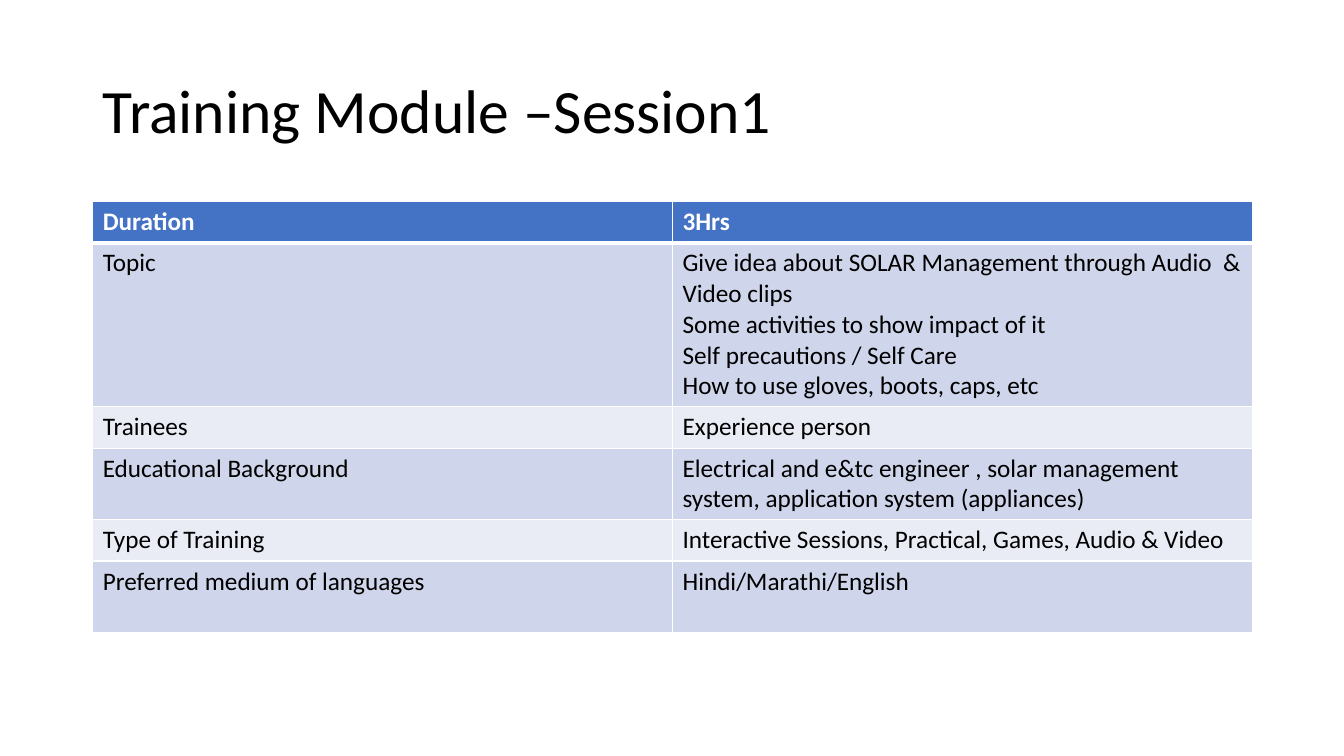
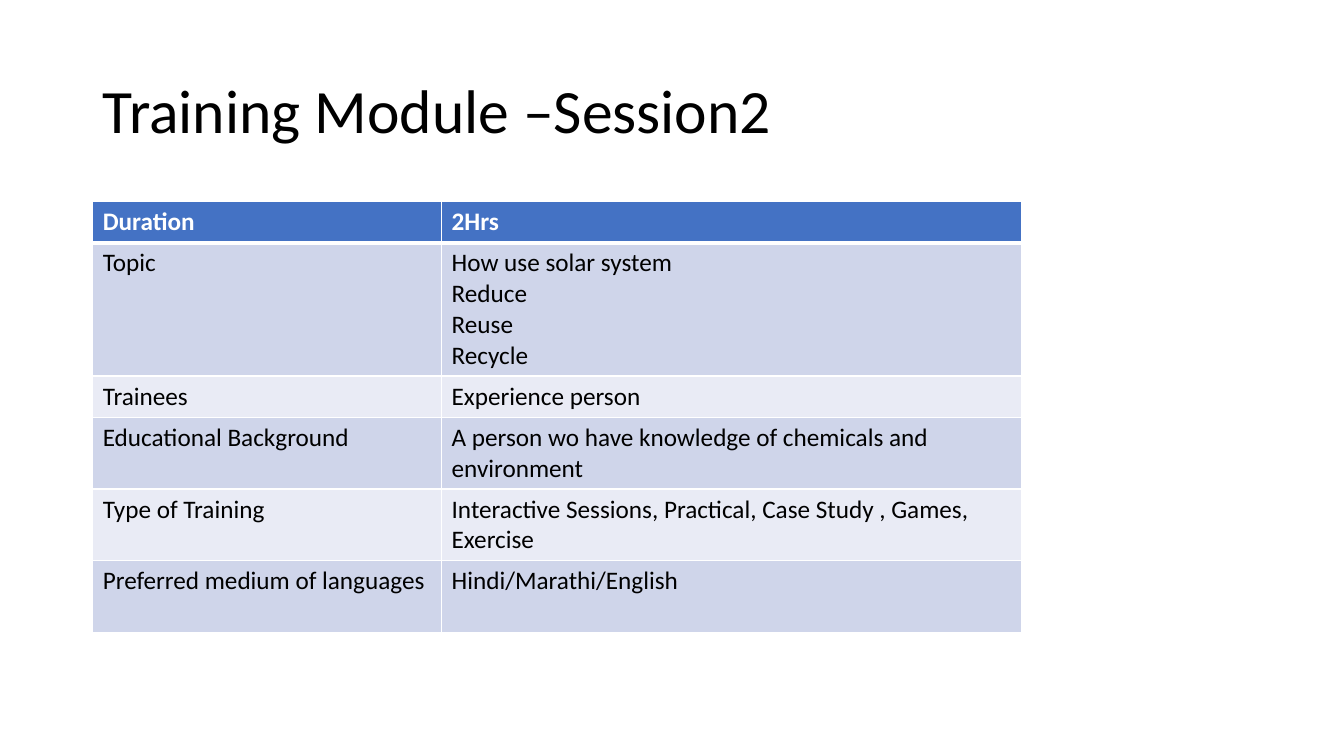
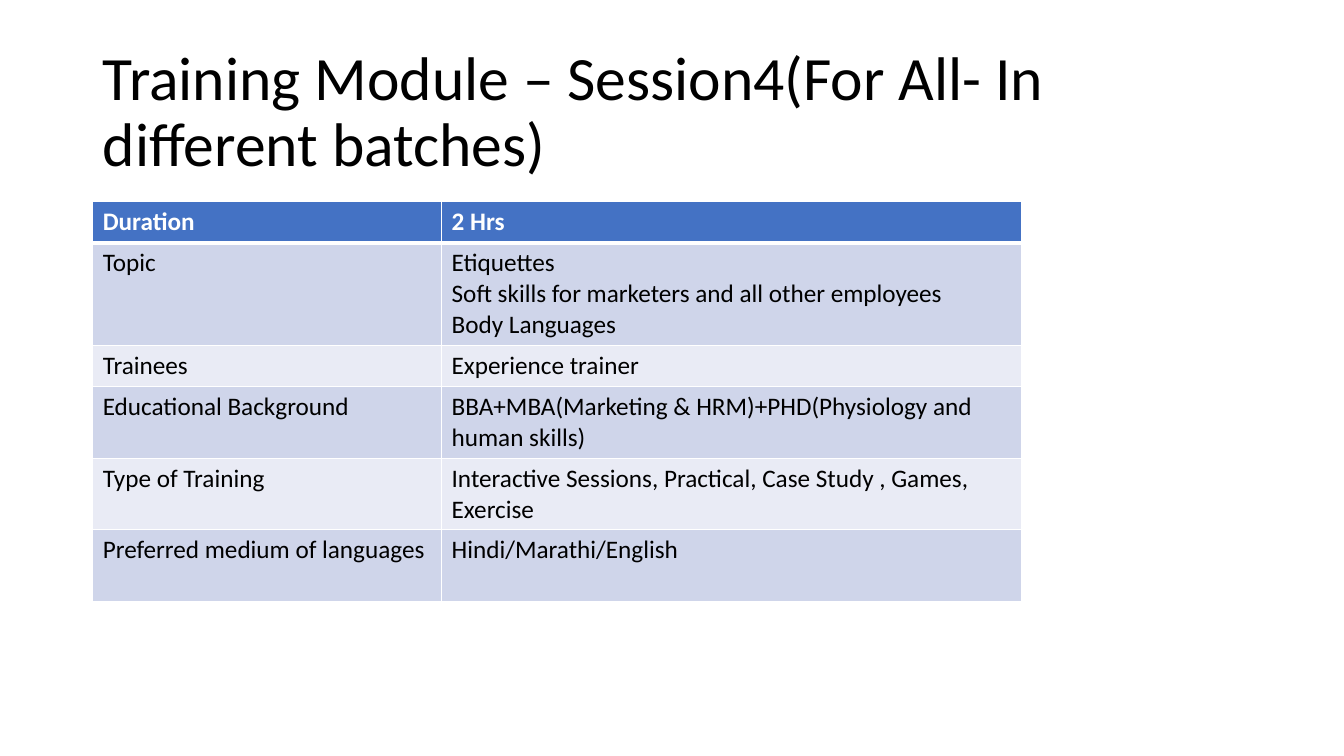
from dataclasses import dataclass

from lxml import etree
from pptx import Presentation
from pptx.dml.color import RGBColor
from pptx.enum.text import MSO_ANCHOR, MSO_AUTO_SIZE, PP_ALIGN
from pptx.oxml.ns import qn
from pptx.util import Pt

LEFT = PP_ALIGN.LEFT
MIDDLE = MSO_ANCHOR.MIDDLE
NO_FIT = MSO_AUTO_SIZE.NONE
SCALE = 9144  # EMU in one px, 100 px to the inch
TITLE_ONLY = 5


@dataclass(frozen=True)
class Theme:
    font: str = "Calibri"
    ink: str = "000000"
    paper: str = "FFFFFF"
    head: str = "4472C4"
    bands: tuple = ("CFD5EA", "E9EBF5")
    big: int = 44
    text: int = 18
    thin: int = 1
    thick: int = 3


def px(num):
    return num * SCALE


def put(item, form):
    for name, value in form.items():
        setattr(item, name, value)


class Deck:
    def __init__(self, theme):
        self.theme = theme
        self.file = Presentation()
        put(self.file, {"slide_width": px(1333), "slide_height": px(750)})
        self.slide = None

    def page(self):
        layout = self.file.slide_layouts[TITLE_ONLY]
        self.slide = self.file.slides.add_slide(layout)

    def style(self, par, size, tint, bold=False):
        form = {"name": self.theme.font, "size": Pt(size), "bold": bold}
        put(par.font, form)
        par.font.color.rgb = RGBColor.from_string(tint)

    def title(self, text):
        box = self.slide.shapes.title
        put(box, {"left": px(92), "top": px(40),
                  "width": px(1150), "height": px(145)})
        frame = box.text_frame
        put(frame, {"text": text, "word_wrap": True,
                    "auto_size": NO_FIT, "vertical_anchor": MIDDLE})
        par = frame.paragraphs[0]
        put(par, {"alignment": LEFT, "line_spacing": 0.9})
        self.style(par, self.theme.big, self.theme.ink)

    def edge(self, cell, row):
        """Draw the cell borders, heavy between the head and the body."""
        theme = self.theme
        heavy = {(0, "lnB"), (1, "lnT")}
        props = cell._tc.get_or_add_tcPr()
        for side in ("lnL", "lnR", "lnT", "lnB"):
            width = theme.thick if (row, side) in heavy else theme.thin
            line = etree.SubElement(props, qn("a:" + side), w=str(Pt(width)))
            fill = etree.SubElement(line, qn("a:solidFill"))
            etree.SubElement(fill, qn("a:srgbClr"), val=theme.paper)

    def cell(self, cell, text, row):
        theme = self.theme
        head = row == 0
        self.edge(cell, row)
        cell.fill.solid()
        fill = theme.head if head else theme.bands[(row - 1) % 2]
        cell.fill.fore_color.rgb = RGBColor.from_string(fill)
        cell.text = text
        for par in cell.text_frame.paragraphs:
            self.style(par, theme.text, theme.paper if head else theme.ink, head)

    def table(self, widths, labels, facts, lines):
        """Fill a two-column table; lines gives the text lines in each row."""
        shape = self.slide.shapes.add_table(
            len(labels), len(widths), px(92), px(200),
            px(sum(widths)), px(41 * len(labels)))
        grid = shape.table
        grid.horz_banding = False
        for col, width in zip(grid.columns, widths):
            col.width = px(width)
        for row, pair in enumerate(zip(labels, facts)):
            grid.rows[row].height = px(11 + 30 * lines[row])
            for col, text in enumerate(pair):
                self.cell(grid.cell(row, col), text, row)


# Row labels and values used in several sessions
LABELS = ("Duration", "Topic", "Trainees", "Educational Background",
          "Type of Training", "Preferred medium of languages")
TONGUES = "Hindi/Marathi/English"
STUDY = "Interactive Sessions, Practical, Case Study , Games, Exercise"
WIDE, SLIM = (575, 575), (346, 575)

# Title, column widths, lines in each row, values
PAGES = (
    ("Training Module –Session1", WIDE, (1, 5, 1, 2, 1, 2), (
        "3Hrs",
        "Give idea about SOLAR Management through Audio  & Video clips\n"
        "Some activities to show impact of it\n"
        "Self precautions / Self Care\n"
        "How to use gloves, boots, caps, etc",
        "Experience person",
        "Electrical and e&tc engineer , solar management system, "
        "application system (appliances)",
        "Interactive Sessions, Practical, Games, Audio & Video",
        TONGUES)),
    ("Training Module –Session2", SLIM, (1, 4, 1, 2, 2, 2), (
        "2Hrs",
        "How use solar system\nReduce\nReuse\nRecycle",
        "Experience person",
        "A person wo have knowledge of chemicals and environment",
        STUDY,
        TONGUES)),
    ("Training Module – Session4(For All- In different batches)", SLIM,
     (1, 3, 1, 2, 2, 2), (
         "2 Hrs",
         "Etiquettes\n"
         "Soft skills for marketers and all other employees\n"
         "Body Languages",
         "Experience trainer",
         "BBA+MBA(Marketing & HRM)+PHD(Physiology and human skills)",
         STUDY,
         TONGUES)),
)


def main():
    deck = Deck(Theme())
    for title, widths, lines, facts in PAGES:
        deck.page()
        deck.title(title)
        deck.table(widths, LABELS, facts, lines)
    deck.file.save("out.pptx")


if __name__ == "__main__":
    main()
